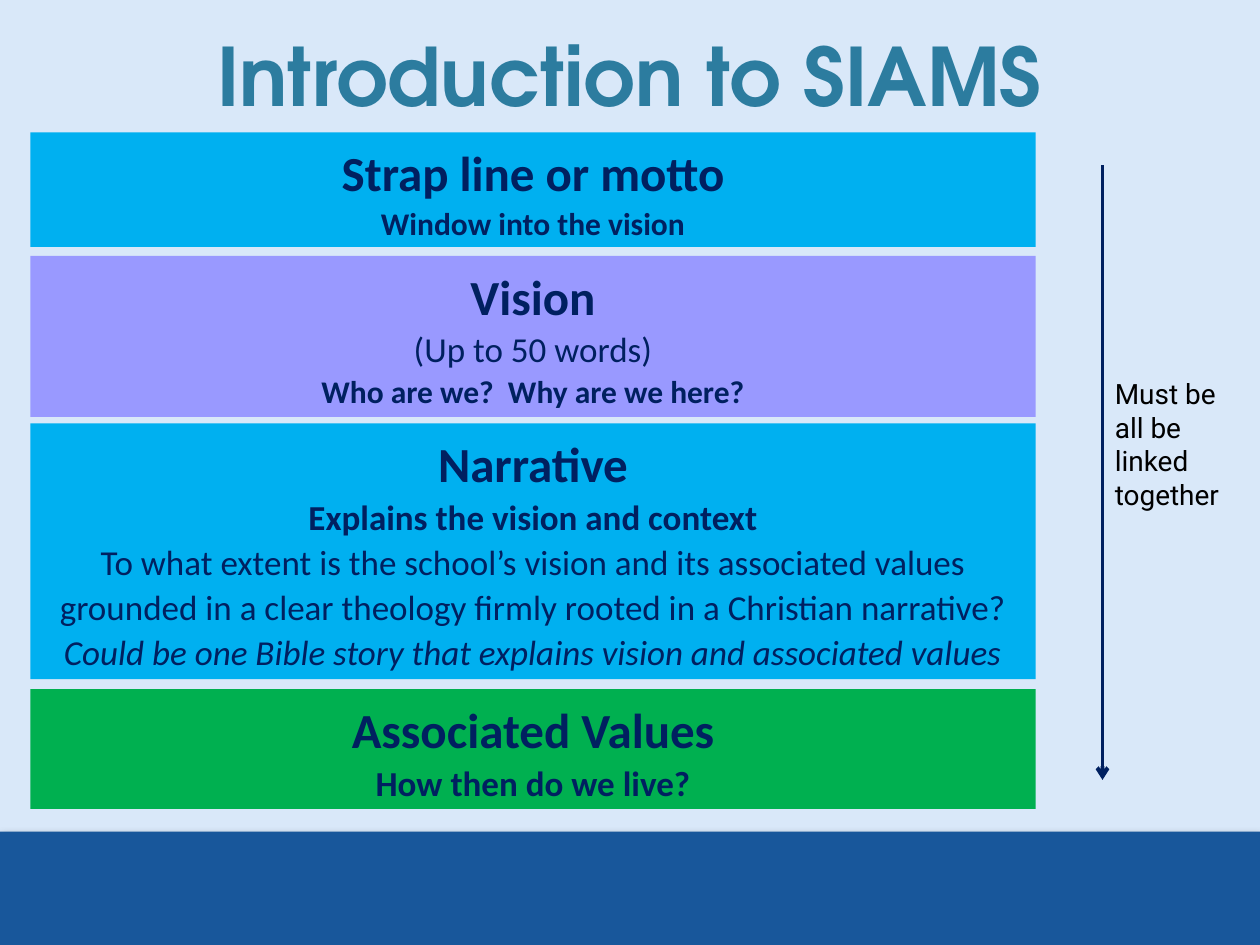
"""Build the Introduction to SIAMS slide with four linked bands and an arrow."""
from lxml.etree import SubElement
from pptx import Presentation
from pptx.dml.color import RGBColor
from pptx.enum.shapes import MSO_CONNECTOR, MSO_SHAPE
from pptx.enum.text import MSO_ANCHOR, MSO_AUTO_SIZE, PP_ALIGN
from pptx.oxml.ns import qn
from pptx.util import Inches, Pt

COLORS = {
    "background": "D9E8F9", "footer": "18579B", "title": "2C7C9F",
    "navy": "002060", "blue": "00B0F0", "violet": "9999FF",
    "green": "00B050", "black": "000000",
}
HEADING = {"size": Pt(28), "bold": True}
STRONG = {"size": Pt(20), "bold": True}
SMALL = {"size": Pt(18), "bold": True}
PLAIN = {"size": Pt(20), "bold": False}
ITALIC = {"size": Pt(20), "bold": False, "italic": True}
BANDS = [
    (1.05, 0.91, "blue", [("Strap line or motto", HEADING),
                          ("Window into the vision", SMALL)]),
    (2.03, 1.28, "violet", [("Vision", HEADING),
                            ("(Up to 50 words)", PLAIN),
                            ("Who are we?  Why are we here?", SMALL)]),
    (3.36, 2.03, "blue", [
        ("Narrative", HEADING),
        ("Explains the vision and context", STRONG),
        ("To what extent is the school’s vision and its associated values "
         "grounded in a clear theology firmly rooted in a Christian narrative?", PLAIN),
        ("Could be one Bible story that explains vision and associated values", ITALIC)]),
    (5.47, 0.95, "green", [("Associated Values", HEADING),
                           ("How then do we live?", STRONG)]),
]


def add_text(paragraph, text, color, formats):
    run = paragraph.add_run()
    run.text = text
    run.font.color.rgb = RGBColor.from_string(COLORS[color])
    for name, value in formats.items():
        setattr(run.font, name, value)


def add_rectangle(slide, left, top, width, height, color):
    shape = slide.shapes.add_shape(
        MSO_SHAPE.RECTANGLE, Inches(left), Inches(top), Inches(width), Inches(height))
    shape.shadow.inherit = False
    shape.fill.solid()
    shape.fill.fore_color.rgb = RGBColor.from_string(COLORS[color])
    shape.line.fill.background()
    return shape


presentation = Presentation()
presentation.slide_width, presentation.slide_height = Inches(10), Inches(7.5)
slide = presentation.slides.add_slide(presentation.slide_layouts[5])
slide.background.fill.solid()
slide.background.fill.fore_color.rgb = RGBColor.from_string(COLORS["background"])

footer = add_rectangle(slide, 0, 6.6, 10, 0.9, "footer")
effects = footer._element.spPr.find(qn("a:effectLst"))
shadow = SubElement(effects, qn("a:outerShdw"), blurRad=str(Pt(5)),
                    dist=str(Pt(2)), dir="5400000", rotWithShape="0")
shadow_color = SubElement(shadow, qn("a:srgbClr"), val=COLORS["black"])
SubElement(shadow_color, qn("a:alpha"), val="40000")

title = slide.shapes.title
title.left, title.top = Inches(0.39), Inches(-0.29)
title.width, title.height = Inches(9.21), Inches(1.31)
title.text_frame.auto_size = MSO_AUTO_SIZE.NONE
title.text_frame.vertical_anchor = MSO_ANCHOR.BOTTOM
title_paragraph = title.text_frame.paragraphs[0]
title_paragraph.alignment = PP_ALIGN.CENTER
add_text(title_paragraph, "Introduction to SIAMS", "title",
         {"size": Pt(46), "name": "TeX Gyre Adventor", "bold": True})

for top, height, color, lines in BANDS:
    band = add_rectangle(slide, 0.24, top, 7.98, height, color)
    frame = band.text_frame
    frame.word_wrap = True
    frame.auto_size = MSO_AUTO_SIZE.SHAPE_TO_FIT_TEXT
    frame.vertical_anchor = MSO_ANCHOR.TOP
    for index, (text, formats) in enumerate(lines):
        paragraph = frame.add_paragraph() if index else frame.paragraphs[0]
        paragraph.alignment = PP_ALIGN.CENTER
        paragraph.line_spacing = 1.07
        add_text(paragraph, text, "navy", {"name": "Calibri", **formats})

arrow = slide.shapes.add_connector(
    MSO_CONNECTOR.STRAIGHT, Inches(8.75), Inches(1.31), Inches(8.75), Inches(6.19))
arrow.line.color.rgb = RGBColor.from_string(COLORS["navy"])
arrow.line.width = Pt(2.25)
SubElement(arrow.line._get_or_add_ln(), qn("a:tailEnd"), type="arrow")
SubElement(arrow._element.spPr, qn("a:effectLst"))

label = slide.shapes.add_textbox(Inches(8.75), Inches(2.94), Inches(1.12), Inches(1.18))
label.text_frame.word_wrap = True
label.text_frame.auto_size = MSO_AUTO_SIZE.SHAPE_TO_FIT_TEXT
add_text(label.text_frame.paragraphs[0], "Must be all be linked together", "black",
         {"size": Pt(16), "name": "Roboto"})

presentation.save("out.pptx")
